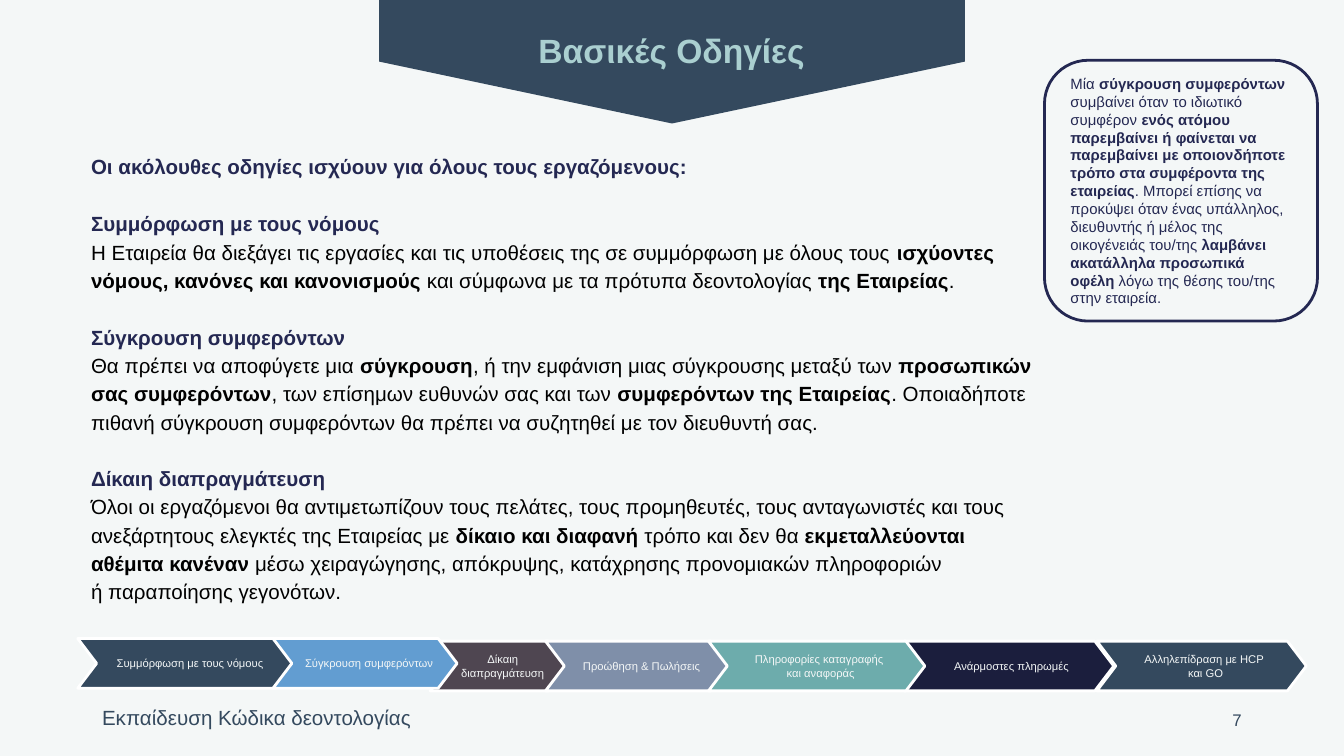
"""Build the basic guidelines slide of the code of ethics training."""
import pptx
import pptx.dml.color
import pptx.enum.shapes
import pptx.enum.text
import pptx.oxml.ns
import pptx.util
from lxml import etree
from pptx.util import Cm

SHAPE = pptx.enum.shapes.MSO_SHAPE
ALIGN = pptx.enum.text.PP_ALIGN
ANCHOR = pptx.enum.text.MSO_ANCHOR
COLORS = {
    "background": "F4F7F7", "slate": "34495E", "mint": "AACFD0",
    "navy": "242852", "black": "000000", "white": "FFFFFF",
    "plum": "4F4651", "midnight": "1B1E3D", "steel": "7F8FA9",
    "teal": "6DACAC", "sky": "629DD1",
}
INTRO = "Οι ακόλουθες οδηγίες ισχύουν για όλους τους εργαζόμενους:"
GUIDELINES = [
    ("Συμμόρφωση με τους νόμους", [
        "Η Εταιρεία θα διεξάγει τις εργασίες και τις υποθέσεις της σε συμμόρφωση με όλους τους ",
        "ισχύοντες νόμους, κανόνες και κανονισμούς",
        " και σύμφωνα με τα πρότυπα δεοντολογίας ",
        "της Εταιρείας", "."]),
    ("Σύγκρουση συμφερόντων", [
        "Θα πρέπει να αποφύγετε μια ", "σύγκρουση",
        ", ή την εμφάνιση μιας σύγκρουσης μεταξύ των ",
        "προσωπικών σας συμφερόντων",
        ", των επίσημων ευθυνών σας και των ", "συμφερόντων της Εταιρείας",
        ". Οποιαδήποτε πιθανή σύγκρουση συμφερόντων θα πρέπει να συζητηθεί με τον διευθυντή σας."]),
    ("Δίκαιη διαπραγμάτευση", [
        "Όλοι οι εργαζόμενοι θα αντιμετωπίζουν τους πελάτες, τους προμηθευτές, τους ανταγωνιστές "
        "και τους ανεξάρτητους ελεγκτές της Εταιρείας με ",
        "δίκαιο και διαφανή ", "τρόπο και δεν θα ",
        "εκμεταλλεύονται \nαθέμιτα κανέναν ",
        "μέσω χειραγώγησης, απόκρυψης, κατάχρησης προνομιακών πληροφοριών \nή παραποίησης γεγονότων."]),
]
DEFINITION = [
    "Μία ", "σύγκρουση συμφερόντων", " συμβαίνει όταν το ιδιωτικό συμφέρον ",
    "ενός ατόμου παρεμβαίνει ή φαίνεται να παρεμβαίνει με οποιονδήποτε τρόπο "
    "στα συμφέροντα της εταιρείας",
    ". Μπορεί επίσης να προκύψει όταν ένας υπάλληλος, διευθυντής ή μέλος της οικογένειάς του/της ",
    "λαμβάνει ακατάλληλα προσωπικά οφέλη",
    " λόγω της θέσης του/της στην εταιρεία.",
]
HIGH, LOW = 12.07, 12.12
STEPS = [
    ("Δίκαιη διαπραγμάτευση", "plum", 8.13, LOW, 2.59),
    ("Ανάρμοστες πληρωμές ", "midnight", 17.09, LOW, 3.96),
    ("Προώθηση & Πωλήσεις", "steel", 10.31, LOW, 3.48),
    ("Πληροφορίες καταγραφής \nκαι αναφοράς", "teal", 13.39, LOW, 4.09),
    ("Συμμόρφωση με τους νόμους", "slate", 1.47, HIGH, 4.09),
    ("Σύγκρουση συμφερόντων", "sky", 5.16, HIGH, 3.48),
    ("Αλληλεπίδραση με HCP \nκαι GO", "slate", 20.73, LOW, 3.96),
]


def rgb(name):
    """Return the named colour."""
    return pptx.dml.color.RGBColor.from_string(COLORS[name])


def add_runs(paragraph, texts, size, color, bold=False):
    """Add runs that alternate in weight, starting with the given one."""
    for text in texts:
        for row, line in enumerate(text.split("\n")):
            if row:
                paragraph.add_line_break()
            run = paragraph.add_run()
            run.text = line
            run.font.name = "Arial"
            run.font.size = pptx.util.Pt(size)
            run.font.bold = bold
            run.font.color.rgb = rgb(color)
        bold = not bold


def set_frame(holder, margins, anchor=ANCHOR.TOP):
    """Set wrapping, margins and anchor, and return the text frame."""
    frame = holder.text_frame
    frame.word_wrap = True
    frame.auto_size = pptx.enum.text.MSO_AUTO_SIZE.NONE
    frame.vertical_anchor = anchor
    (frame.margin_left, frame.margin_top,
     frame.margin_right, frame.margin_bottom) = map(Cm, margins)
    return frame


def place(holder, left, top, width, height):
    """Move and size a placeholder."""
    holder.left, holder.top = Cm(left), Cm(top)
    holder.width, holder.height = Cm(width), Cm(height)


def add_figure(shapes, kind, box, adjustment, fill=None, line=None):
    """Add a preset shape without shadow."""
    figure = shapes.add_shape(kind, *map(Cm, box))
    figure.shadow.inherit = False
    figure.adjustments[0] = adjustment
    if fill:
        figure.fill.solid()
        figure.fill.fore_color.rgb = rgb(fill)
    else:
        figure.fill.background()
    if line:
        figure.line.color.rgb = rgb(line)
        figure.line.width = pptx.util.Pt(1.5)
    else:
        figure.line.fill.background()
    return figure


def add_label(slide, box, text, size, align, anchor):
    """Add a line of text at the foot of the slide."""
    label = slide.shapes.add_textbox(*map(Cm, box))
    paragraph = set_frame(label, (0.18, 0.1, 0.18, 0.1), anchor).paragraphs[0]
    paragraph.alignment = align
    add_runs(paragraph, [text], size, "slate")


def add_heading(slide):
    """Fill the title and put the banner behind it."""
    title = slide.shapes.title
    place(title, 5.66, 0.46, 14.07, 0.97)
    paragraph = set_frame(title, (0.18, 0.1, 0.18, 0.1)).paragraphs[0]
    paragraph.alignment = ALIGN.CENTER
    add_runs(paragraph, ["Βασικές Οδηγίες"], 18, "mint", True)
    banner = add_figure(slide.shapes, SHAPE.PENTAGON,
                        (11.53, -4.37, 2.34, 11.07), 0.5, "slate")
    banner.rotation = 90
    title.element.addprevious(banner.element)


def add_guideline_line(paragraph, texts, color, bold, spacing=1.15, gap=0):
    """Format one unbulleted paragraph of the guidelines."""
    properties = paragraph._p.get_or_add_pPr()
    properties.set("marL", "0")
    properties.set("indent", "0")
    paragraph.alignment = ALIGN.LEFT
    paragraph.line_spacing = spacing
    paragraph.space_before = pptx.util.Pt(gap)
    paragraph.space_after = pptx.util.Pt(0)
    etree.SubElement(properties, pptx.oxml.ns.qn("a:buNone"))
    add_runs(paragraph, texts, 11, color, bold)


def add_guidelines(slide):
    """Fill the body with the introduction and the guidelines."""
    body = slide.placeholders[1]
    place(body, 1.47, 2.72, 19, 8.94)
    frame = set_frame(body, [0.25] * 4)
    add_guideline_line(frame.paragraphs[0], [INTRO], "navy", True, 0.9)
    for heading, texts in GUIDELINES:
        add_guideline_line(frame.add_paragraph(), [heading], "navy", True, gap=15.2)
        add_guideline_line(frame.add_paragraph(), texts, "black", False)


def add_definition(slide):
    """Add the outlined definition of a conflict of interest."""
    callout = add_figure(slide.shapes, SHAPE.ROUNDED_RECTANGLE,
                         (19.74, 1.14, 5.16, 4.93), 0.167, line="navy")
    paragraph = set_frame(callout, [0.25] * 4, ANCHOR.MIDDLE).paragraphs[0]
    paragraph.alignment = ALIGN.LEFT
    add_runs(paragraph, DEFINITION, 8, "navy")


def add_steps(slide):
    """Add the grouped chevrons that list the training topics."""
    group = slide.shapes.add_group_shape()
    for topic, color, left, top, width in STEPS:
        step = add_figure(group.shapes, SHAPE.CHEVRON,
                          (left, top, width, 0.94), 0.38, color, "white")
        paragraph = set_frame(step, (0.15, 0, 0, 0), ANCHOR.MIDDLE).paragraphs[0]
        paragraph.alignment = ALIGN.CENTER
        add_runs(paragraph, [topic], 6, "background")


def main():
    """Build and save the slide."""
    deck = pptx.Presentation()
    deck.slide_width, deck.slide_height = Cm(25.4), Cm(14.29)
    slide = deck.slides.add_slide(deck.slide_layouts[1])
    slide.background.fill.solid()
    slide.background.fill.fore_color.rgb = rgb("background")
    add_heading(slide)
    add_guidelines(slide)
    add_definition(slide)
    add_steps(slide)
    add_label(slide, (1.75, 13.23, 10.62, 0.64), "Εκπαίδευση Κώδικα δεοντολογίας",
              11, ALIGN.LEFT, ANCHOR.TOP)
    add_label(slide, (17.93, 13.23, 5.72, 0.76), "7", 9, ALIGN.RIGHT, ANCHOR.MIDDLE)
    deck.save("out.pptx")


if __name__ == "__main__":
    main()
